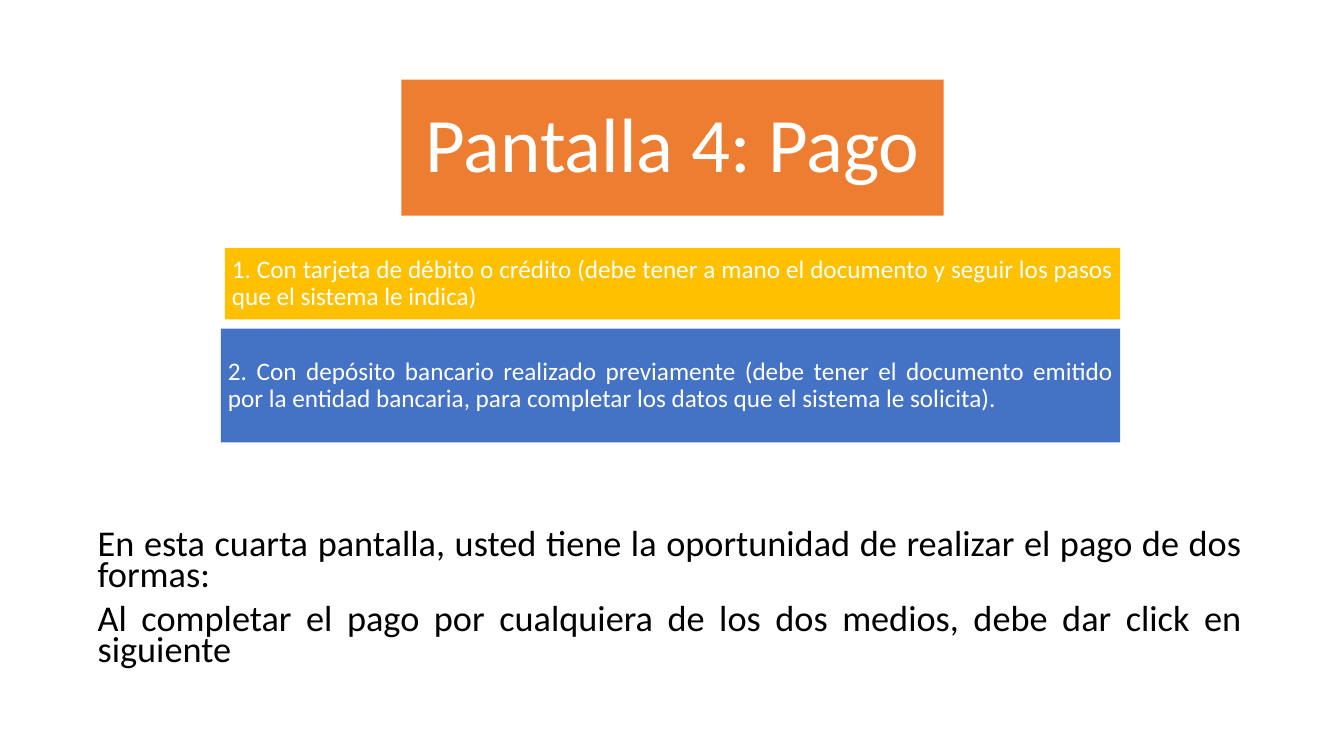
from pptx import Presentation
from pptx.dml.color import RGBColor
from pptx.enum.shapes import MSO_SHAPE
from pptx.enum.text import MSO_ANCHOR, MSO_AUTO_SIZE, PP_ALIGN
from pptx.util import Inches, Pt

FONT = "Calibri"
ORANGE = RGBColor(0xED, 0x7D, 0x31)
GOLD = RGBColor(0xFF, 0xC0, 0x00)
BLUE = RGBColor(0x44, 0x72, 0xC4)
WHITE = RGBColor(0xFF, 0xFF, 0xFF)
BLACK = RGBColor(0x00, 0x00, 0x00)

# Left, top, width, height, fill, text
PAYMENT_OPTIONS = [
    (2.23, 2.46, 8.88, 0.71, GOLD,
     "1. Con tarjeta de débito o crédito (debe tener a mano el documento y "
     "seguir los pasos que el sistema le indica)"),
    (2.19, 3.26, 8.92, 1.13, BLUE,
     "2. Con depósito bancario realizado previamente (debe tener el documento "
     "emitido por la entidad bancaria, para completar los datos que el "
     "sistema le solicita)."),
]
INSTRUCTIONS = [
    "En esta cuarta pantalla, usted tiene la oportunidad de realizar el pago "
    "de dos formas:",
    "Al completar el pago por cualquiera de los dos medios, debe dar click en "
    "siguiente",
]


def set_frame(text_frame, inset, anchor=MSO_ANCHOR.MIDDLE):
    text_frame.word_wrap = True
    text_frame.auto_size = MSO_AUTO_SIZE.NONE
    text_frame.vertical_anchor = anchor
    text_frame.margin_left = text_frame.margin_right = Inches(inset)
    text_frame.margin_top = text_frame.margin_bottom = Inches(inset)


def format_paragraphs(text_frame, size, color, alignment, line_spacing=0.9,
                      space_before=0):
    for paragraph in text_frame.paragraphs:
        paragraph.alignment = alignment
        paragraph.line_spacing = line_spacing
        paragraph.space_before = Pt(space_before)
        for run in paragraph.runs:
            run.font.name = FONT
            run.font.size = Pt(size)
            run.font.color.rgb = color


def set_title(slide, text):
    title = slide.shapes.title
    title.left, title.top = Inches(3.98), Inches(0.79)
    title.width, title.height = Inches(5.38), Inches(1.35)
    title.fill.solid()
    title.fill.fore_color.rgb = ORANGE
    title.text_frame.text = text
    set_frame(title.text_frame, 0.23)
    format_paragraphs(title.text_frame, 55, WHITE, PP_ALIGN.CENTER)


def add_instructions(slide, texts):
    box = slide.shapes.add_textbox(
        Inches(0.87), Inches(4.85), Inches(11.55), Inches(2))
    text_frame = box.text_frame
    text_frame.text = "\n".join(texts)
    set_frame(text_frame, 0.1, MSO_ANCHOR.BOTTOM)
    text_frame.margin_bottom = Inches(0.22)
    format_paragraphs(text_frame, 25.9, BLACK, PP_ALIGN.JUSTIFY, 0.7, 10)


def add_option(slide, left, top, width, height, color, text):
    shape = slide.shapes.add_shape(
        MSO_SHAPE.RECTANGLE,
        Inches(left), Inches(top), Inches(width), Inches(height))
    shape.shadow.inherit = False
    shape.fill.solid()
    shape.fill.fore_color.rgb = color
    shape.line.fill.background()
    shape.text_frame.text = text
    set_frame(shape.text_frame, 0.07)
    format_paragraphs(shape.text_frame, 18, WHITE, PP_ALIGN.JUSTIFY)


def main():
    presentation = Presentation()
    presentation.slide_width = Inches(13.33)
    presentation.slide_height = Inches(7.5)
    slide = presentation.slides.add_slide(presentation.slide_layouts[5])

    # Heading
    set_title(slide, "Pantalla 4: Pago")

    # Ways to pay
    for option in PAYMENT_OPTIONS:
        add_option(slide, *option)

    # Closing instructions
    add_instructions(slide, INSTRUCTIONS)

    presentation.save("out.pptx")


if __name__ == "__main__":
    main()
